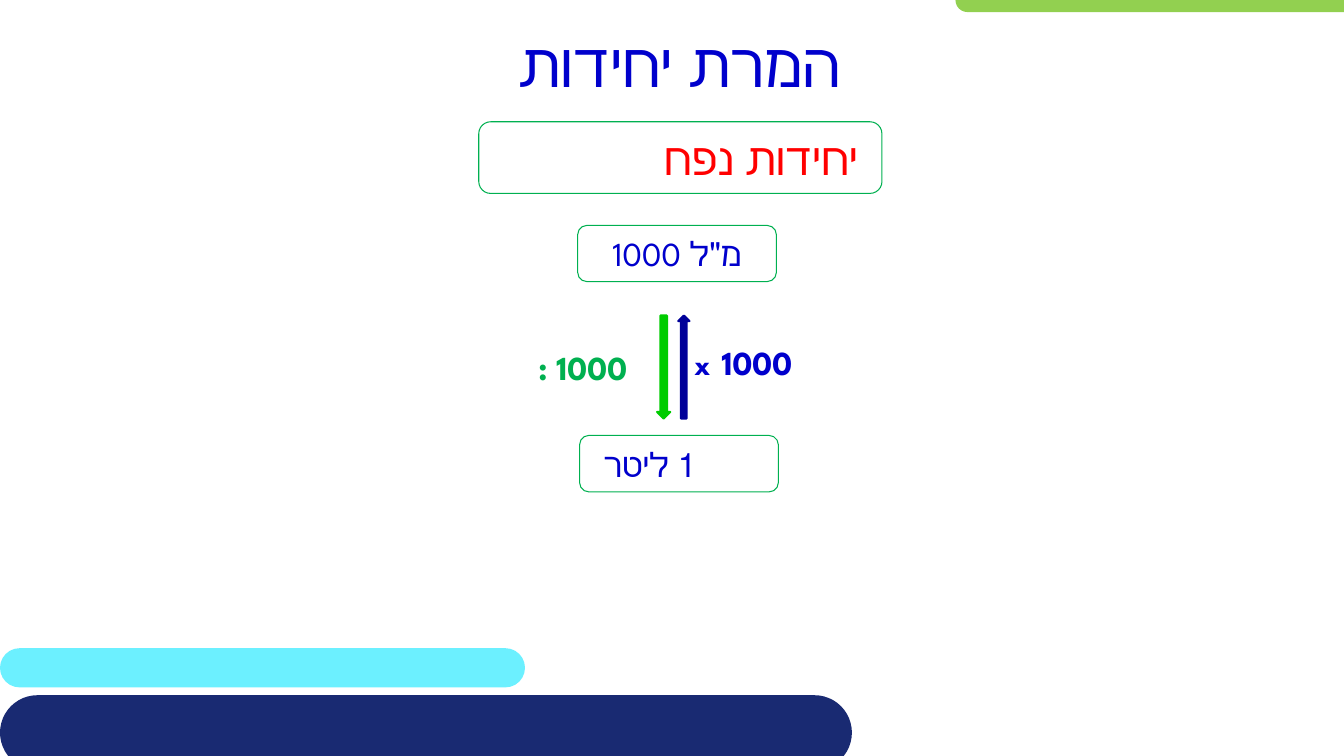
from lxml import etree
from pptx import Presentation
from pptx.dml.color import RGBColor
from pptx.enum.shapes import MSO_SHAPE
from pptx.enum.text import MSO_ANCHOR, PP_ALIGN
from pptx.oxml.ns import qn
from pptx.util import Pt

ROUND = MSO_SHAPE.ROUNDED_RECTANGLE
DOWN, UP = MSO_SHAPE.DOWN_ARROW, MSO_SHAPE.UP_ARROW
LEFT, CENTER, RIGHT = PP_ALIGN.LEFT, PP_ALIGN.CENTER, PP_ALIGN.RIGHT
TOP, MIDDLE = MSO_ANCHOR.TOP, MSO_ANCHOR.MIDDLE

FONT = "League Spartan"
COLORS = {
    "cyan": "6CF0FF", "lime": "92D050", "navy": "192A72", "blue": "0000CC",
    "red": "FF0000", "green": "00B050", "down": "00CC00", "up": "000099",
}

BARS = [
    (0, 463, 375, 28, "cyan"),
    (682.5, -8.6, 417.6, 17.2, "lime"),
    (0, 496.6, 608.5, 53.4, "navy"),
]
TITLE = ("המרת יחידות ", (0, 16.6, 960, 56.9))
BOXES = [
    ("יחידות נפח", (342, 87, 288, 51.2), 32, "red", RIGHT, True, 14.5, FONT),
    ("1000 מ\"ל", (412.6, 161, 142, 40.2), 24, "blue", CENTER, False, 7.2, None),
    ("1 ליטר", (414, 311, 142, 40.4), 24, "blue", RIGHT, True, 56.5, None),
]
ARROWS = [(DOWN, 469.4, 9.4, "down"), (UP, 484.5, 8, "up")]
ARROW_TOP, ARROW_HEIGHT = 225.4, 73.6
FACTORS = [
    ([("x", 21.3, True), (" ", 32, False), ("1000", 24, True)],
     (488.9, 232.6, 94.3, 46), "blue"),
    ([(": 1000", 24, True)], (377.3, 244, 99.4, 36), "green"),
]


def rgb(name):
    return RGBColor.from_string(COLORS[name])


def add_shape(s, kind, box, fill=None, line=None, width=0.75):
    sp = s.shapes.add_shape(kind, *map(Pt, box))
    sp.shadow.inherit = False
    if fill:
        sp.fill.solid()
        sp.fill.fore_color.rgb = rgb(fill)
    else:
        sp.fill.background()
    if line:
        sp.line.color.rgb = rgb(line)
        sp.line.width = Pt(width)
    else:
        sp.line.fill.background()
    return sp


def write(sp, runs, color, align=LEFT, rtl=False, anchor=TOP, right=7.2,
          hebrew_font=None):
    tf = sp.text_frame
    tf.word_wrap = True
    tf.vertical_anchor = anchor
    tf.margin_right = Pt(right)
    p = tf.paragraphs[0]
    p.alignment = align
    if rtl:
        p._p.get_or_add_pPr().set("rtl", "1")
    for text, size, bold in runs:
        r = p.add_run()
        r.text = text
        r.font.name = FONT
        r.font.size = Pt(size)
        r.font.bold = bold
        r.font.color.rgb = rgb(color)
        if hebrew_font:
            cs = etree.SubElement(r._r.get_or_add_rPr(), qn("a:cs"))
            cs.set("typeface", hebrew_font)


def main():
    prs = Presentation()
    prs.slide_width, prs.slide_height = Pt(960), Pt(540)
    s = prs.slides.add_slide(prs.slide_layouts[6])

    for *box, color in BARS:
        add_shape(s, ROUND, box, fill=color).adjustments[0] = 0.5

    text, box = TITLE
    sp = s.shapes.add_textbox(*map(Pt, box))
    write(sp, [(text, 44, False)], "blue", CENTER, True, MIDDLE, hebrew_font=FONT)

    for text, box, size, color, align, rtl, right, hebrew_font in BOXES:
        sp = add_shape(s, ROUND, box, line="green")
        write(sp, [(text, size, False)], color, align, rtl, MIDDLE, right, hebrew_font)

    for kind, left, width, color in ARROWS:
        add_shape(s, kind, (left, ARROW_TOP, width, ARROW_HEIGHT), color, color, 1.5)

    for runs, box, color in FACTORS:
        write(s.shapes.add_textbox(*map(Pt, box)), runs, color)

    prs.save("out.pptx")


if __name__ == "__main__":
    main()
